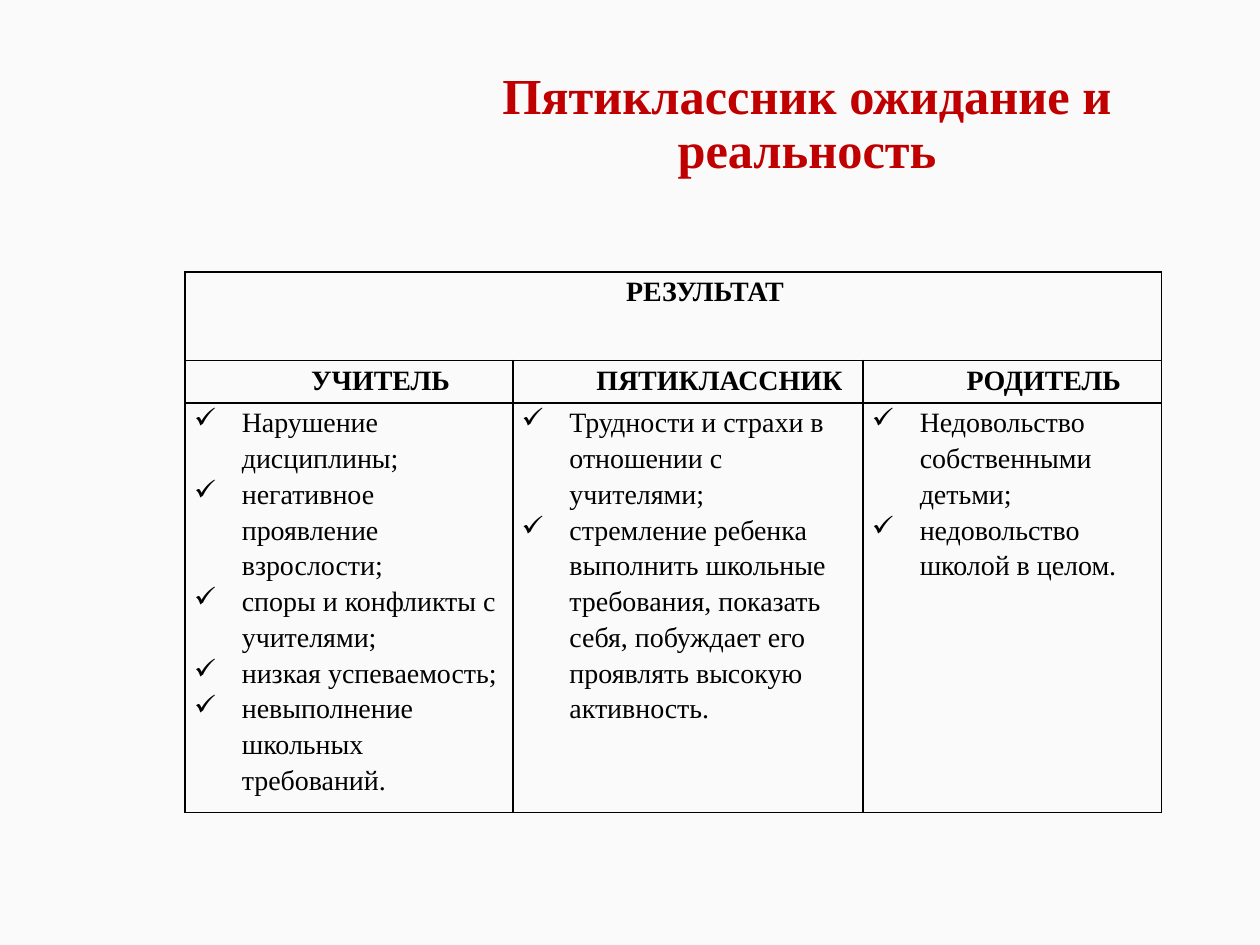
from lxml.etree import SubElement
from pptx import Presentation
from pptx.dml.color import RGBColor
from pptx.enum.text import MSO_ANCHOR, PP_ALIGN
from pptx.oxml import parse_xml
from pptx.oxml.ns import nsdecls, qn
from pptx.util import Inches, Pt

TITLE = "Пятиклассник ожидание и реальность"
HEADING = "РЕЗУЛЬТАТ"
COLUMNS = [
    ("УЧИТЕЛЬ", 2.6, [
        "Нарушение дисциплины;",
        "негативное проявление взрослости;",
        "споры и конфликты с учителями;",
        "низкая успеваемость;",
        "невыполнение школьных требований.",
    ]),
    ("ПЯТИКЛАССНИК", 2.78, [
        "Трудности и страхи в отношении с учителями;",
        "стремление ребенка выполнить школьные требования, показать себя, "
        "побуждает его проявлять высокую активность.",
    ]),
    ("РОДИТЕЛЬ", 2.37, [
        "Недовольство собственными детьми;",
        "недовольство школой в целом.",
    ]),
]
ROW_HEIGHTS = [0.7, 0.34, 3.25]
COLORS = {"background": "FAFAFA", "title": "C00000", "text": "000000",
          "border": "000000", "outline": "FFFFFF"}
FONT = "Times New Roman"


def line_xml(tag, color, points):
    return parse_xml(
        f'<a:{tag} {nsdecls("a")} w="{Pt(points)}"><a:solidFill>'
        f'<a:srgbClr val="{COLORS[color]}"/></a:solidFill></a:{tag}>')


def style_run(span, size, color, bold):
    span.font.name = FONT
    span.font.size = Pt(size)
    span.font.bold = bold
    span.font.color.rgb = RGBColor.from_string(COLORS[color])


def format_cell(cell):
    cell.margin_left = cell.margin_right = Inches(0.07)
    cell.margin_top = cell.margin_bottom = 0
    properties = cell._tc.get_or_add_tcPr()
    for side in ("lnL", "lnR", "lnT", "lnB"):
        properties.append(line_xml(side, "border", 1))
    cell.fill.background()


def write_cell(cell, lines, heading):
    """Write a centred bold heading or a list with check marks."""
    cell.text_frame.text = "\n".join(lines)
    for para in cell.text_frame.paragraphs:
        properties = para._p.get_or_add_pPr()
        left, indent = (0.5, 0) if heading else (0.38, -0.38)
        properties.set("marL", str(Inches(left)))
        properties.set("indent", str(Inches(indent)))
        if not heading:
            SubElement(properties, qn("a:buChar")).set("char", "✓")
        para.alignment = PP_ALIGN.CENTER if heading else PP_ALIGN.LEFT
        para.line_spacing = 1.15
        style_run(para.runs[0], 16, "text", heading)


def add_title(page):
    title = page.shapes.title
    title.left, title.top = Inches(2.94), Inches(0.56)
    title.width, title.height = Inches(6.93), Inches(0.87)
    title.text_frame.text = TITLE
    title.text_frame.vertical_anchor = MSO_ANCHOR.MIDDLE
    para = title.text_frame.paragraphs[0]
    para.alignment = PP_ALIGN.CENTER
    para.line_spacing = 0.9
    span = para.runs[0]
    style_run(span, 28.8, "title", True)
    span._r.get_or_add_rPr().insert(0, line_xml("ln", "outline", 0.75))


def add_result_table(page):
    widths = [width for _, width, _ in COLUMNS]
    table = page.shapes.add_table(
        len(ROW_HEIGHTS), len(COLUMNS), Inches(1.47), Inches(2.16),
        Inches(sum(widths)), Inches(sum(ROW_HEIGHTS))).table
    table.first_row = table.horz_banding = False
    for row, height in zip(table.rows, ROW_HEIGHTS):
        row.height = Inches(height)
    for cell in table.iter_cells():
        format_cell(cell)
    table.cell(0, 0).merge(table.cell(0, len(COLUMNS) - 1))
    write_cell(table.cell(0, 0), [HEADING], True)
    for index, (name, width, items) in enumerate(COLUMNS):
        table.columns[index].width = Inches(width)
        write_cell(table.cell(1, index), [name], True)
        write_cell(table.cell(2, index), items, False)


def main():
    deck = Presentation()
    deck.slide_width, deck.slide_height = Inches(10), Inches(7.5)
    page = deck.slides.add_slide(deck.slide_layouts[5])
    page.background.fill.solid()
    page.background.fill.fore_color.rgb = RGBColor.from_string(COLORS["background"])
    add_title(page)
    add_result_table(page)
    deck.save("out.pptx")


if __name__ == "__main__":
    main()
